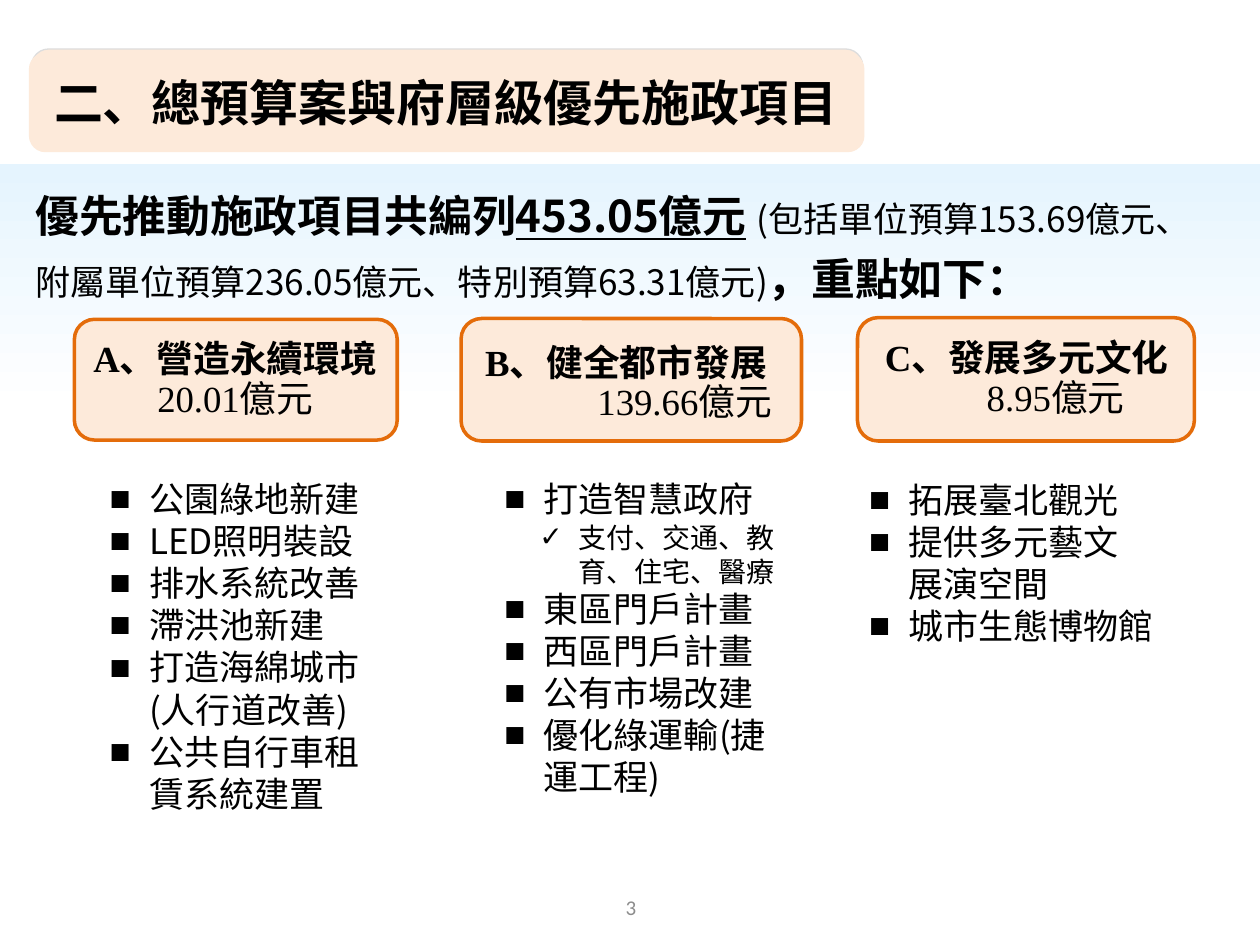
from dataclasses import dataclass

from lxml.etree import SubElement
from pptx import Presentation
from pptx.dml.color import RGBColor
from pptx.enum.shapes import MSO_SHAPE
from pptx.enum.text import MSO_ANCHOR, MSO_AUTO_SIZE, PP_ALIGN
from pptx.oxml.ns import qn
from pptx.util import Pt

BLACK = RGBColor(0x00, 0x00, 0x00)
GRAY = RGBColor(0x8C, 0x8C, 0x8C)
SILVER = RGBColor(0xDD, 0xDD, 0xDD)
PEACH = RGBColor(0xFD, 0xEA, 0xDA)
ORANGE = RGBColor(0xE4, 0x6C, 0x0A)
SKY = RGBColor(0xE5, 0xF4, 0xFE)
WHITE = RGBColor(0xFF, 0xFF, 0xFF)
SANS = "Noto Sans CJK SC"
SERIF = "Times New Roman"

Box = tuple[float, float, float, float]


@dataclass
class Item:
    text: str
    bullet: str = "■"
    size: float = 20
    pitch: float = 24
    left: float = 22.5
    level: int = 0


@dataclass
class Column:
    card: Box
    label: Box
    heading: str
    amount: str
    amount_left: float
    list_box: Box
    items: list[Item]


COLUMNS = [
    Column((42.5, 182.5, 184.5, 69), (46, 186, 177, 62.5),
           "A、營造永續環境", "20.01億元", 0, (55.5, 269.5, 158.5, 225.5),
           [Item("公園綠地新建"), Item("LED照明裝設"), Item("排水系統改善"),
            Item("滯洪池新建"), Item("打造海綿城市(人行道改善)"),
            Item("公共自行車租賃系統建置")]),
    Column((263.5, 182, 194.5, 70), (263.5, 188, 188.5, 62.5),
           "B、健全都市發展", "139.66億元", 67, (281, 269.5, 170.5, 191.5),
           [Item("打造智慧政府"),
            Item("支付、交通、教育、住宅、醫療", "✓", 16, 19.4, 42.5, 1),
            Item("東區門戶計畫"), Item("西區門戶計畫"),
            Item("公有市場改建"), Item("優化綠運輸(捷運工程)")]),
    Column((490, 181.5, 192.5, 70.5), (494, 185, 185.5, 63.5),
           "C、發展多元文化", "8.95億元", 33, (489.5, 270, 216.5, 104.5),
           [Item("拓展臺北觀光"), Item("提供多元藝文"),
            Item("展演空間", bullet=""), Item("城市生態博物館")]),
]

prs = Presentation()
prs.slide_width, prs.slide_height = Pt(720), Pt(540)
s = prs.slides.add_slide(prs.slide_layouts[4])


def add_box(box: Box, shape: MSO_SHAPE, fill: RGBColor | None = None,
            line: RGBColor | None = None, width: float = 2):
    sp = s.shapes.add_shape(shape, *map(Pt, box))
    sp.shadow.inherit = False
    if fill is not None:
        sp.fill.solid()
        sp.fill.fore_color.rgb = fill
    if line is None:
        sp.line.fill.background()
    else:
        sp.line.color.rgb = line
        sp.line.width = Pt(width)
    return sp


def set_frame(sp, anchor=MSO_ANCHOR.TOP):
    tf = sp.text_frame
    tf.word_wrap = True
    tf.auto_size = MSO_AUTO_SIZE.NONE
    tf.vertical_anchor = anchor
    return tf


def add_frame(box: Box, anchor=MSO_ANCHOR.MIDDLE):
    return set_frame(s.shapes.add_textbox(*map(Pt, box)), anchor)


def place(sp, box: Box, anchor=MSO_ANCHOR.TOP):
    """Move a placeholder to its box, in front of the shapes drawn so far."""
    sp.left, sp.top, sp.width, sp.height = map(Pt, box)
    s.shapes.element.append(sp.element)
    return set_frame(sp, anchor)


def add_paragraph(tf, align=PP_ALIGN.LEFT, pitch: float | None = None,
                  left: float = 0, indent: float = 0, bullet: str = "",
                  level: int = 0):
    p = tf.paragraphs[0] if not tf.text else tf.add_paragraph()
    p.alignment = align
    p.level = level
    p.space_before = p.space_after = Pt(0)
    if pitch:
        p.line_spacing = Pt(pitch)
    pPr = p._p.get_or_add_pPr()
    pPr.set("marL", str(Pt(left)))
    pPr.set("indent", str(Pt(indent)))
    if bullet:
        SubElement(pPr, qn("a:buChar"), char=bullet)
    else:
        SubElement(pPr, qn("a:buNone"))
    return p


def add_text(p, text: str, *, size: float, font: str = SANS,
             color: RGBColor = BLACK, bold: bool = False,
             underline: bool = False) -> None:
    r = p.add_run()
    r.text = text
    r.font.size = Pt(size)
    r.font.bold = bold
    r.font.underline = underline
    r.font.color.rgb = color
    r.font.name = font
    SubElement(r._r.get_or_add_rPr(), qn("a:ea"), typeface=SANS)


def add_column(col: Column, body) -> None:
    add_box(col.card, MSO_SHAPE.ROUNDED_RECTANGLE, PEACH, ORANGE)
    tf = add_frame(col.label)
    for text, bold, left in ((col.heading, True, 0),
                             (col.amount, False, col.amount_left)):
        p = add_paragraph(tf, PP_ALIGN.CENTER, 22.5, left)
        add_text(p, text, size=21, font=SERIF, bold=bold)
    tf = place(body, col.list_box)
    for item in col.items:
        p = add_paragraph(tf, pitch=item.pitch, left=item.left,
                          indent=-22.5 if item.bullet else 0,
                          bullet=item.bullet, level=item.level)
        add_text(p, item.text, size=item.size)


# Pale band fading to white
band = add_box((0, 93.5, 720, 141), MSO_SHAPE.RECTANGLE)
band.fill.gradient()
band.fill.gradient_angle = 270
for stop, color in zip(band.fill.gradient_stops, (SKY, WHITE)):
    stop.color.rgb = color

# Title on its plate
add_box((18, 28, 475, 58.5), MSO_SHAPE.ROUNDED_RECTANGLE, PEACH, SILVER, 0.75)
add_box((16.5, 30, 477.5, 57), MSO_SHAPE.ROUNDED_RECTANGLE, PEACH)
tf = place(s.shapes.title, (16.5, 37.5, 576, 41), MSO_ANCHOR.MIDDLE)
add_text(add_paragraph(tf, indent=7.2), "二、總預算案與府層級優先施政項目",
         size=28, font=SERIF, bold=True)

# Lead statement
lead, *bodies = [sp for sp in s.placeholders if sp.placeholder_format.idx in range(1, 5)]
tf = place(lead, (13, 98, 706, 77))
p = add_paragraph(tf, pitch=36)
add_text(p, "優先推動施政項目共編列", size=25, bold=True)
add_text(p, "453.05億元", size=25, bold=True, underline=True)
add_text(p, " ", size=25, bold=True)
add_text(p, "(包括單位預算153.69億元、", size=20)
p = add_paragraph(tf, pitch=36)
add_text(p, "附屬單位預算236.05億元、特別預算63.31億元)", size=20)
add_text(p, "，重點如下：", size=25, bold=True)

# Three policy columns
for col, body in zip(COLUMNS, bodies):
    add_column(col, body)

# Page number
p = add_paragraph(add_frame((279.5, 504, 162, 29)), PP_ALIGN.CENTER)
add_text(p, "3", size=12, font="Calibri", color=GRAY)

prs.save("out.pptx")
